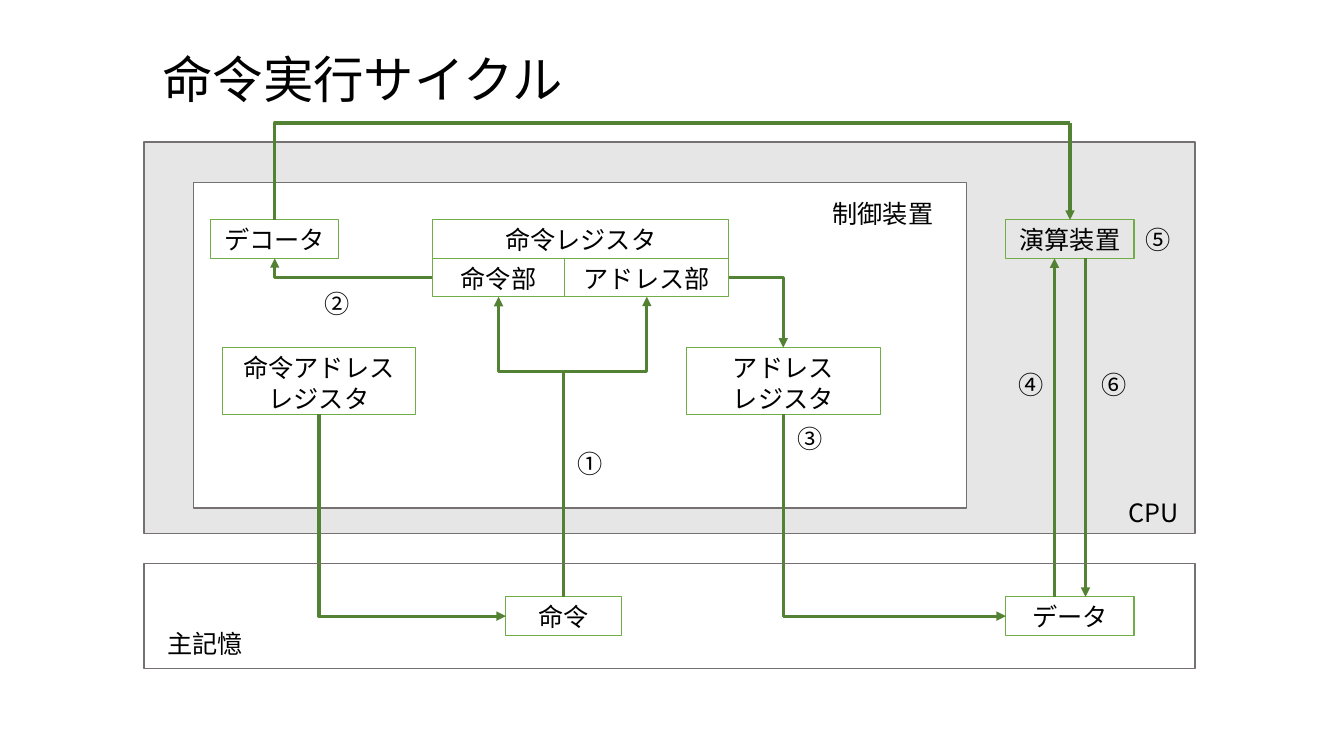
from dataclasses import dataclass

from lxml import etree
from pptx import Presentation
from pptx import util as u
from pptx.dml.color import RGBColor
from pptx.enum import shapes, text
from pptx.oxml import ns

BLACK = RGBColor(0x00, 0x00, 0x00)
WHITE = RGBColor(0xFF, 0xFF, 0xFF)
PALE_GRAY = RGBColor(0xE7, 0xE6, 0xE6)
DARK_GRAY = RGBColor(0x76, 0x71, 0x71)
GREEN = RGBColor(0x70, 0xAD, 0x47)
DARK_GREEN = RGBColor(0x54, 0x82, 0x35)
NOTO = "Noto Sans CJK JP"
ARIAL = "Arial"
ROW = 0.97  # height of a one-line box
TALL = 1.68  # height of a two-line box
Point = tuple[float, float]


@dataclass(frozen=True)
class Box:
    """A rectangle or text, measured in centimetres."""
    left: float
    top: float
    width: float
    height: float = ROW
    text: str = ""
    font: str = NOTO
    size: int = 18

    @property
    def cx(self) -> float:
        return self.left + self.width / 2

    @property
    def cy(self) -> float:
        return self.top + self.height / 2

    @property
    def right(self) -> float:
        return self.left + self.width

    @property
    def bottom(self) -> float:
        return self.top + self.height

    def frame(self) -> list[u.Cm]:
        return [u.Cm(v) for v in (self.left, self.top, self.width, self.height)]


@dataclass(frozen=True)
class Elbow:
    """A bent connector; middle is the share of the way to its crossbar."""
    start: Point
    end: Point
    vertical_first: bool = False
    middle: float | None = None
    arrow: bool = True


def write(sp, box: Box, align: text.PP_ALIGN) -> None:
    tf = sp.text_frame
    tf.text = box.text
    tf.word_wrap = True
    tf.auto_size = text.MSO_AUTO_SIZE.SHAPE_TO_FIT_TEXT
    tf.vertical_anchor = text.MSO_ANCHOR.TOP
    for p in tf.paragraphs:
        p.alignment = align
        for r in p.runs:
            r.font.size = u.Pt(box.size)
            r.font.name = box.font
            r.font.color.rgb = BLACK
            ea = etree.SubElement(r.font._element, ns.qn("a:ea"))
            ea.set("typeface", box.font)


def add_box(slide, box: Box, line: RGBColor, width: float, fill: RGBColor | None = None):
    sp = slide.shapes.add_shape(shapes.MSO_SHAPE.RECTANGLE, *box.frame())
    sp.shadow.inherit = False
    if fill is None:
        sp.fill.background()
    else:
        sp.fill.solid()
        sp.fill.fore_color.rgb = fill
    sp.line.color.rgb = line
    sp.line.width = u.Pt(width)
    if box.text:
        write(sp, box, text.PP_ALIGN.CENTER)
    return sp


def add_label(slide, box: Box) -> None:
    write(slide.shapes.add_textbox(*box.frame()), box, text.PP_ALIGN.LEFT)


def add_line(slide, kind: shapes.MSO_CONNECTOR, start: Point, end: Point, arrow: bool = True):
    cn = slide.shapes.add_connector(kind, *(u.Cm(v) for v in start + end))
    cn.line.color.rgb = DARK_GREEN
    cn.line.width = u.Pt(2.25)
    if arrow:
        etree.SubElement(cn.line._get_or_add_ln(), ns.qn("a:tailEnd")).set("type", "triangle")
    etree.SubElement(cn._element.spPr, ns.qn("a:effectLst"))
    return cn


def add_elbow(slide, elbow: Elbow) -> None:
    (x1, y1), (x2, y2) = start, end = elbow.start, elbow.end
    if elbow.vertical_first:  # lay it out sideways, then turn it by 90 degrees
        cx, cy, dx, dy = (x1 + x2) / 2, (y1 + y2) / 2, (x2 - x1) / 2, (y2 - y1) / 2
        start, end = (cx - dy, cy + dx), (cx + dy, cy - dx)
    cn = add_line(slide, shapes.MSO_CONNECTOR.ELBOW, start, end, elbow.arrow)
    spPr = cn._element.spPr
    if elbow.vertical_first:
        spPr.find(ns.qn("a:xfrm")).set("rot", str(90 * 60000))
    geom = spPr.find(ns.qn("a:prstGeom"))
    if elbow.middle is None:
        geom.set("prst", "bentConnector2")
    else:
        gd = etree.SubElement(geom.find(ns.qn("a:avLst")), ns.qn("a:gd"))
        gd.set("name", "adj1")
        gd.set("fmla", f"val {round(elbow.middle * 100000)}")


# Frames
CPU = Box(3.63, 3.58, 26.49, 9.86)
CONTROL = Box(4.88, 4.6, 19.48, 8.2)
MEMORY = Box(3.63, 14.2, 26.49, 2.64)

# Units, registers and memory cells
DECODER = Box(5.31, 5.54, 3.23, text="デコータ", font=ARIAL)
REGISTER = Box(10.9, 5.54, 7.47, text="命令レジスタ")
OPERATION = Box(10.9, 6.51, 3.33, text="命令部")
ADDRESS = Box(14.23, 6.51, 4.14, text="アドレス部")
INSTR_ADDRESS_REG = Box(5.6, 8.76, 4.88, TALL, "命令アドレス\nレジスタ")
ADDRESS_REG = Box(17.3, 8.76, 4.88, TALL, "アドレス\nレジスタ")
ALU = Box(25.35, 5.54, 3.23, text="演算装置", font=ARIAL)
DATA = Box(25.35, 15.04, 3.23, text="データ", font=ARIAL)
INSTRUCTION = Box(12.75, 15.04, 2.92, text="命令", font=ARIAL)
BOXES = [DECODER, REGISTER, OPERATION, ADDRESS, INSTR_ADDRESS_REG,
         ADDRESS_REG, ALU, DATA, INSTRUCTION]

# Routes
BUS_Y = 3.1  # line above the CPU
FORK_Y = 9.37  # where the fetched instruction splits
LANE = 0.39  # offset of the two data lanes from the middle
ELBOWS = [
    Elbow((OPERATION.left, OPERATION.cy), (DECODER.cx, DECODER.bottom)),
    Elbow((DECODER.cx, DECODER.top), (ALU.cx, BUS_Y), True, arrow=False),
    Elbow((ADDRESS.right, ADDRESS.cy), (ADDRESS_REG.cx, ADDRESS_REG.top)),
    Elbow((ADDRESS_REG.cx, ADDRESS_REG.bottom), (DATA.left, DATA.cy), True),
    Elbow((INSTRUCTION.cx, INSTRUCTION.top), (OPERATION.cx, OPERATION.bottom), True, 0.75),
    Elbow((INSTRUCTION.cx, FORK_Y), (ADDRESS.cx, ADDRESS.bottom)),
    Elbow((INSTR_ADDRESS_REG.cx, INSTR_ADDRESS_REG.bottom),
          (INSTRUCTION.left, INSTRUCTION.cy), True),
]

# Names and step numbers
LABELS = [
    Box(28.19, 12.4, 2.03, text="CPU"),
    Box(20.73, 4.88, 3.23, text="制御装置"),
    Box(3.96, 15.7, 3.23, text="主記憶"),
    Box(14.3, 11.18, 1.37, text="①"),
    Box(28.63, 5.54, 1.27, text="⑤"),
    Box(27.51, 9.17, 1.27, text="⑥"),
    Box(25.43, 9.17, 1.3, text="④"),
    Box(19.84, 10.54, 1.12, text="③"),
    Box(7.92, 7.14, 1.27, text="②"),
    Box(3.84, 1.09, 13.79, 1.8, "命令実行サイクル", size=36),
]


def main() -> None:
    prs = Presentation()
    prs.slide_width, prs.slide_height = u.Cm(33.87), u.Cm(19.05)
    slide = prs.slides.add_slide(prs.slide_layouts[6])

    add_box(slide, CPU, DARK_GRAY, 1, PALE_GRAY)
    add_box(slide, CONTROL, DARK_GRAY, 1, WHITE)
    placed = {box: add_box(slide, box, GREEN, 0.75) for box in BOXES}

    for elbow in ELBOWS:
        add_elbow(slide, elbow)
    straight = shapes.MSO_CONNECTOR.STRAIGHT
    cn = add_line(slide, straight, (ALU.cx, BUS_Y), (ALU.cx, ALU.top))
    cn.end_connect(placed[ALU], 0)
    add_line(slide, straight, (ALU.cx + LANE, ALU.bottom), (ALU.cx + LANE, DATA.top))
    add_line(slide, straight, (ALU.cx - LANE, DATA.top), (ALU.cx - LANE, ALU.bottom))

    add_box(slide, MEMORY, DARK_GRAY, 1)
    for label in LABELS:
        add_label(slide, label)
    prs.save("out.pptx")


if __name__ == "__main__":
    main()
